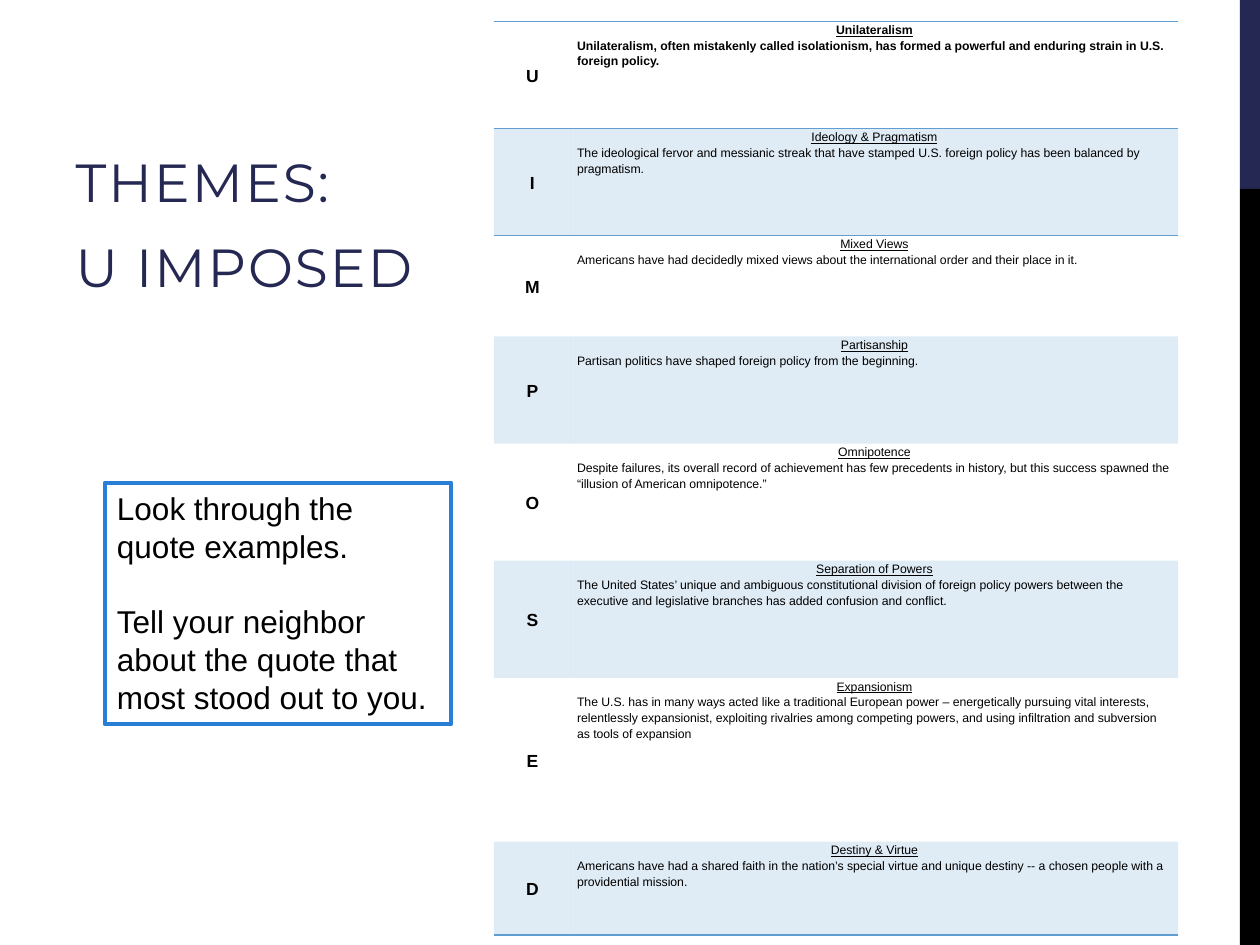
from lxml.etree import SubElement
from pptx import Presentation
from pptx.dml.color import RGBColor
from pptx.enum.shapes import MSO_SHAPE as Shape
from pptx.enum.text import MSO_ANCHOR as Anchor, PP_ALIGN as Align
from pptx.oxml.ns import qn
from pptx.util import Inches, Pt

NAVY, BLACK, WHITE = "242852", "000000", "FFFFFF"
SKY, BLUE = "629DD1", "297FD5"
PLAIN_TABLE_STYLE = "{2D5ABB26-0587-4C30-8999-92F81FD0307C}"

THEMES = [
    ("Unilateralism", "Unilateralism, often mistakenly called isolationism, has formed a "
     "powerful and enduring strain in U.S. foreign policy.", 0.85),
    ("Ideology & Pragmatism", "The ideological fervor and messianic streak that have stamped "
     "U.S. foreign policy has been balanced by pragmatism.", 0.85),
    ("Mixed Views", "Americans have had decidedly mixed views about the international order "
     "and their place in it.", 0.8),
    ("Partisanship", "Partisan politics have shaped foreign policy from the beginning.", 0.85),
    ("Omnipotence", "Despite failures, its overall record of achievement has few precedents in "
     "history, but this success spawned the “illusion of American omnipotence.”", 0.93),
    ("Separation of Powers", "The United States’ unique and ambiguous constitutional division of "
     "foreign policy powers between the executive and legislative branches has added confusion "
     "and conflict.", 0.93),
    ("Expansionism", "The U.S. has in many ways acted like a traditional European power – "
     "energetically pursuing vital interests, relentlessly expansionist, exploiting rivalries "
     "among competing powers, and using infiltration and subversion as tools of expansion", 1.3),
    ("Destiny & Virtue", "Americans have had a shared faith in the nation’s special virtue and "
     "unique destiny -- a chosen people with a providential mission.", 0.74),
]


def rgb(value):
    return RGBColor.from_string(value)


def apply(target, formats):
    for name, value in formats.items():
        setattr(target, name, value)


def write(frame, lines):
    """Fill a text frame from (text, paragraph formats, font formats, colour)."""
    for index, (text, layout, font, colour) in enumerate(lines):
        paragraph = frame.paragraphs[0] if index == 0 else frame.add_paragraph()
        apply(paragraph, layout)
        run = paragraph.add_run()
        run.text = text
        apply(run.font, font)
        run.font.color.rgb = rgb(colour)


def add_block(slide, box, fill):
    block = slide.shapes.add_shape(Shape.RECTANGLE, *map(Inches, box))
    block.shadow.inherit = False
    block.fill.solid()
    block.fill.fore_color.rgb = rgb(fill)
    block.line.fill.background()
    return block


def add_side_band(slide, left, top, width, height):
    accent = height / 5
    add_block(slide, (left, top, width, accent), NAVY)
    add_block(slide, (left, top + accent, width, height - accent), BLACK)


def add_heading(slide, left, top, width, height):
    title = slide.shapes.title
    apply(title, dict(left=Inches(left), top=Inches(top),
                      width=Inches(width), height=Inches(height)))
    apply(title.text_frame, dict(word_wrap=True, vertical_anchor=Anchor.BOTTOM))
    layout = dict(alignment=Align.LEFT, space_before=Pt(6), space_after=Pt(6))
    font = dict(name="Montserrat", size=Pt(30.6))
    write(title.text_frame, [(line, layout, font, NAVY) for line in ("THEMES:", "U IMPOSED")])
    for paragraph in title.text_frame.paragraphs:
        paragraph.runs[0].font._element.set("spc", "120")


def add_task(slide, left, top, width, height):
    task = add_block(slide, (left, top, width, height), WHITE)
    task.line.color.rgb = rgb(BLUE)
    task.line.width = Pt(2.25)
    apply(task.text_frame, dict(word_wrap=True, vertical_anchor=Anchor.TOP))
    pitch = Pt(21.6)
    layout = dict(alignment=Align.LEFT, line_spacing=pitch)
    font = dict(name="Arial", size=Pt(18))
    write(task.text_frame, [
        ("Look through the quote examples.", layout, font, BLACK),
        ("Tell your neighbor about the quote that most stood out to you.",
         layout | dict(space_before=pitch), font, BLACK),
    ])


def style_cell(cell, anchor, edges, shaded):
    apply(cell, dict(vertical_anchor=anchor, margin_left=Inches(0.05),
                     margin_right=Inches(0.05), margin_top=0, margin_bottom=0))
    properties = cell._tc.get_or_add_tcPr()
    for edge in edges:
        line = SubElement(properties, qn(f"a:{edge}"), w=str(Pt(1)))
        SubElement(SubElement(line, qn("a:solidFill")), qn("a:srgbClr"), val=SKY)
    if shaded:
        cell.fill.solid()
        cell.fill.fore_color.rgb = rgb(SKY)
        SubElement(properties.find(f".//{qn('a:solidFill')}[last()]/{qn('a:srgbClr')}")
                   if not edges else properties[-1][0], qn("a:alpha"), val="20000")
    else:
        cell.fill.background()


def add_themes(slide, left, top, width, height):
    letter_width = 0.61
    frame = slide.shapes.add_table(len(THEMES), 2, *map(Inches, (left, top, width, height)))
    table = frame.table
    table._tbl.tblPr.find(qn("a:tableStyleId")).text = PLAIN_TABLE_STYLE
    apply(table, dict(first_row=False, horz_banding=False))
    table.columns[0].width = Inches(letter_width)
    table.columns[1].width = Inches(width - letter_width)

    centred = dict(alignment=Align.CENTER, line_spacing=1.15)
    flush = centred | dict(alignment=Align.LEFT)
    borders = {0: ("lnT", "lnB"), 1: ("lnT",), len(THEMES) - 1: ("lnB",)}
    for row, (theme, summary, row_height) in enumerate(THEMES):
        table.rows[row].height = Inches(row_height)
        letter, detail = table.cell(row, 0), table.cell(row, 1)
        for cell, anchor in ((letter, Anchor.MIDDLE), (detail, Anchor.TOP)):
            style_cell(cell, anchor, borders.get(row, ()), row % 2 == 1)
        font = dict(name="Arial", size=Pt(7), bold=row == 0)
        write(letter.text_frame,
              [(theme[0], centred, font | dict(size=Pt(10), bold=True), BLACK)])
        write(detail.text_frame, [(theme, centred, font | dict(underline=True), BLACK),
                                  (summary, flush, font, BLACK)])


def main():
    deck = Presentation()
    apply(deck, dict(slide_width=Inches(10), slide_height=Inches(7.5)))
    slide = deck.slides.add_slide(deck.slide_layouts[5])
    add_side_band(slide, 9.84, 0, 0.16, 7.5)
    add_heading(slide, 0.5, 1.25, 3.25, 1.17)
    add_themes(slide, 3.92, 0.17, 5.43, 7.25)
    add_task(slide, 0.83, 3.83, 2.75, 1.92)
    deck.save("out.pptx")


if __name__ == "__main__":
    main()
